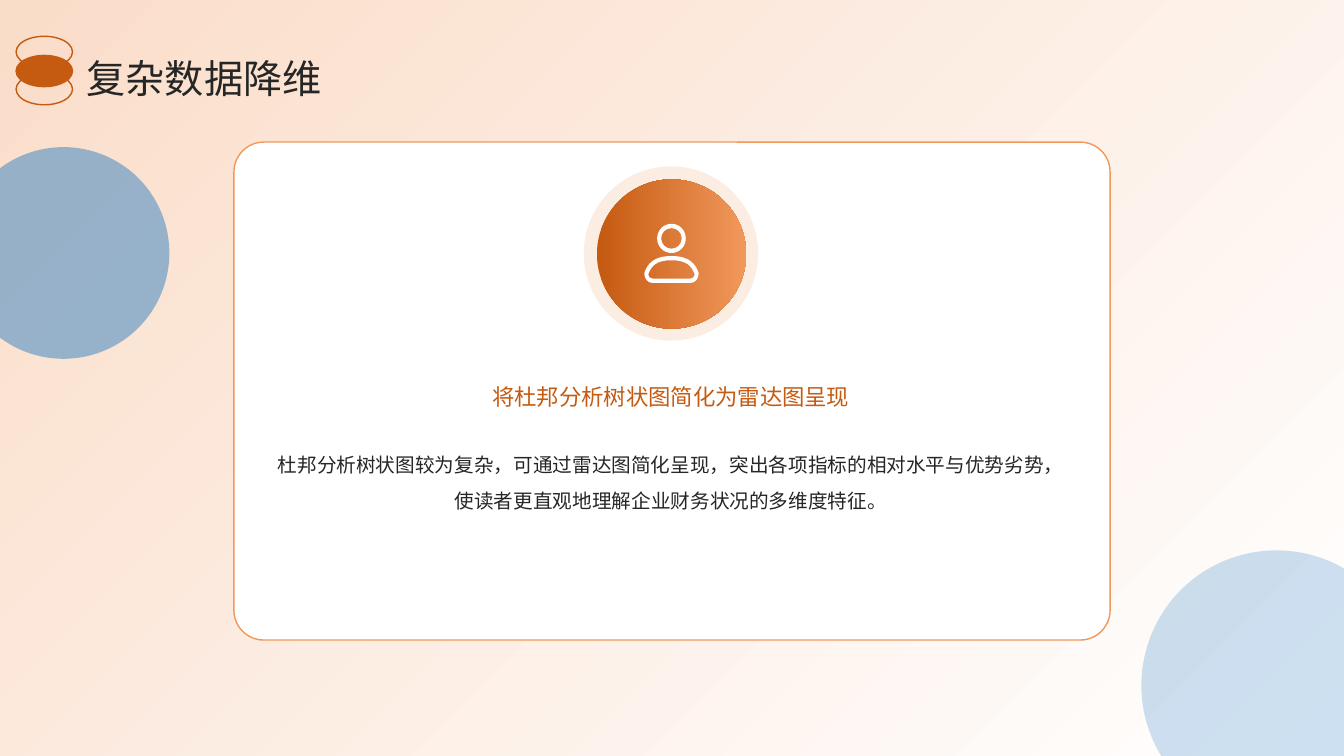
from collections.abc import Iterator
from dataclasses import dataclass

from lxml import etree
from pptx import Presentation
from pptx.dml.color import RGBColor
from pptx.enum.shapes import MSO_SHAPE
from pptx.enum.text import MSO_ANCHOR, PP_ALIGN
from pptx.oxml.ns import qn
from pptx.shapes.autoshape import Shape
from pptx.shapes.shapetree import GroupShapes, SlideShapes
from pptx.util import Pt

PX = 9144
ICON_UNIT = PX / 10

RECTANGLE = MSO_SHAPE.RECTANGLE
ROUNDED = MSO_SHAPE.ROUNDED_RECTANGLE
OVAL = MSO_SHAPE.OVAL
LEFT = PP_ALIGN.LEFT
CENTER = PP_ALIGN.CENTER
TOP = MSO_ANCHOR.TOP
MIDDLE = MSO_ANCHOR.MIDDLE

WHITE = RGBColor(0xFF, 0xFF, 0xFF)
PEACH = RGBColor(0xFA, 0xDD, 0xC9)
ORANGE = RGBColor(0xF1, 0x98, 0x5C)
RUST = RGBColor(0xC5, 0x5A, 0x11)
BLUE = RGBColor(0x00, 0x68, 0xBF)
INK = RGBColor(0x26, 0x26, 0x26)
FONT = "Noto Sans CJK SC"

Point = tuple[int, int]


@dataclass(frozen=True)
class Box:
    left: int
    top: int
    width: int
    height: int

    def emu(self) -> tuple[int, int, int, int]:
        return self.left * PX, self.top * PX, self.width * PX, self.height * PX


@dataclass(frozen=True)
class Gradient:
    start: RGBColor
    end: RGBColor
    angle: int


@dataclass(frozen=True)
class Panel:
    box: Box
    kind: MSO_SHAPE = OVAL
    fill: RGBColor | Gradient | None = None
    line: RGBColor | None = None
    opacity: int = 100
    corner: float | None = None


@dataclass(frozen=True)
class Caption:
    box: Box
    text: str
    size: int
    color: RGBColor
    spacing: float
    align: PP_ALIGN
    anchor: MSO_ANCHOR


@dataclass(frozen=True)
class HalfOutline:
    top: int
    curves: tuple[tuple[Point, Point, Point], ...]

    def right(self) -> list[Point]:
        return [(0, self.top)] + [point for curve in self.curves for point in curve]

    def has_flat_base(self) -> bool:
        return self.right()[-1][0] > 0

    def full(self) -> list[Point]:
        right = self.right()
        mirrored = right if self.has_flat_base() else right[:-1]
        return right + [(-x, y) for x, y in reversed(mirrored)]


BACKDROP_AND_CARD = [
    Panel(Box(0, 0, 1333, 750), RECTANGLE, Gradient(WHITE, PEACH, 135)),
    Panel(Box(232, 141, 869, 494), ROUNDED, WHITE, ORANGE, corner=0.06),
    Panel(Box(579, 165, 173, 173), fill=PEACH, opacity=50),
    Panel(Box(592, 178, 148, 148), fill=Gradient(RUST, ORANGE, 0)),
]
BLUE_CIRCLES = [
    Panel(Box(1132, 546, 268, 268), fill=BLUE, opacity=20),
    Panel(Box(-42, 146, 210, 210), fill=BLUE, opacity=40),
]
EMBLEM = [
    Panel(Box(16, top, 56, 31), fill=fill, line=RUST)
    for top, fill in ((73, None), (55, RUST), (36, None))
]

CARD_CAPTIONS = [
    Caption(Box(271, 348, 789, 82), "将杜邦分析树状图简化为雷达图呈现",
            16, RUST, 1.3, CENTER, MIDDLE),
    Caption(Box(271, 438, 789, 174),
            "杜邦分析树状图较为复杂，可通过雷达图简化呈现，突出各项指标的相对水平与优势劣势，"
            "使读者更直观地理解企业财务状况的多维度特征。",
            14, INK, 1.5, CENTER, TOP),
]
TITLE = Caption(Box(86, 49, 1167, 51), "复杂数据降维", 28, INK, 1.1, LEFT, MIDDLE)

PERSON_CENTER, PERSON_TOP = 666, 222
PERSON = [
    HalfOutline(0, (((79, 0), (142, 65), (142, 145)),
                    ((142, 225), (79, 290), (0, 290)))),
    HalfOutline(43, (((56, 43), (102, 88), (102, 145)),
                     ((102, 202), (56, 247), (0, 247)))),
    HalfOutline(320, (((180, 320), (240, 400), (270, 490)),
                      ((272, 540), (235, 587), (190, 587)))),
    HalfOutline(362, (((150, 362), (200, 418), (230, 502)),
                      ((230, 525), (215, 543), (190, 543)))),
]


def paint(shape: Shape, fill: RGBColor | Gradient | None,
          line: RGBColor | None = None, opacity: int = 100) -> None:
    shape.shadow.inherit = False
    if fill is None:
        shape.fill.background()
    elif isinstance(fill, Gradient):
        shape.fill.gradient()
        shape.fill.gradient_angle = fill.angle
        for stop, color in zip(shape.fill.gradient_stops, (fill.start, fill.end)):
            stop.color.rgb = color
    else:
        shape.fill.solid()
        shape.fill.fore_color.rgb = fill
    if opacity < 100:
        color = shape.element.spPr.find(qn("a:solidFill"))[0]
        etree.SubElement(color, qn("a:alpha"), val=str(opacity * 1000))
    if line is None:
        shape.line.fill.background()
    else:
        shape.line.color.rgb = line
        shape.line.width = Pt(1)


def draw_panel(shapes: SlideShapes | GroupShapes, panel: Panel) -> None:
    shape = shapes.add_shape(panel.kind, *panel.box.emu())
    if panel.corner is not None:
        shape.adjustments[0] = panel.corner
    paint(shape, panel.fill, panel.line, panel.opacity)


def draw_caption(shapes: SlideShapes, caption: Caption) -> None:
    frame = shapes.add_textbox(*caption.box.emu()).text_frame
    frame.word_wrap = True
    frame.vertical_anchor = caption.anchor
    frame.margin_left = frame.margin_right = 0
    frame.margin_top = frame.margin_bottom = 0
    paragraph = frame.paragraphs[0]
    paragraph.text = caption.text
    paragraph.alignment = caption.align
    paragraph.line_spacing = caption.spacing
    paragraph.font.size = Pt(caption.size)
    paragraph.font.color.rgb = caption.color
    paragraph.font.name = FONT
    latin = next(paragraph._p.iter(qn("a:latin")))
    latin.addnext(etree.Element(qn("a:ea"), typeface=FONT))


def bend(segments: Iterator[etree._Element], count: int) -> None:
    for _ in range(count):
        controls = [next(segments) for _ in range(3)]
        curve = etree.Element(qn("a:cubicBezTo"))
        controls[0].addprevious(curve)
        for control in controls:
            curve.append(control[0])
            control.getparent().remove(control)


def draw_person(shapes: SlideShapes) -> None:
    first, *others = [half.full() for half in PERSON]
    builder = shapes.build_freeform(*first[0], scale=ICON_UNIT)
    builder.add_line_segments(first[1:], close=True)
    for outline in others:
        builder.move_to(*outline[0])
        builder.add_line_segments(outline[1:], close=True)
    person = builder.convert_to_shape(PERSON_CENTER * PX, PERSON_TOP * PX)
    segments = iter(list(person.element.iter(qn("a:lnTo"))))
    for half in PERSON:
        bend(segments, len(half.curves))
        if half.has_flat_base():
            next(segments)
        bend(segments, len(half.curves))
    paint(person, WHITE)


def main() -> None:
    deck = Presentation()
    deck.slide_width, deck.slide_height = 1333 * PX, 750 * PX
    shapes = deck.slides.add_slide(deck.slide_layouts[6]).shapes
    for panel in BACKDROP_AND_CARD:
        draw_panel(shapes, panel)
    for caption in CARD_CAPTIONS:
        draw_caption(shapes, caption)
    draw_person(shapes)
    for panel in BLUE_CIRCLES:
        draw_panel(shapes, panel)
    draw_caption(shapes, TITLE)
    emblem = shapes.add_group_shape().shapes
    for panel in EMBLEM:
        draw_panel(emblem, panel)
    deck.save("out.pptx")


if __name__ == "__main__":
    main()
